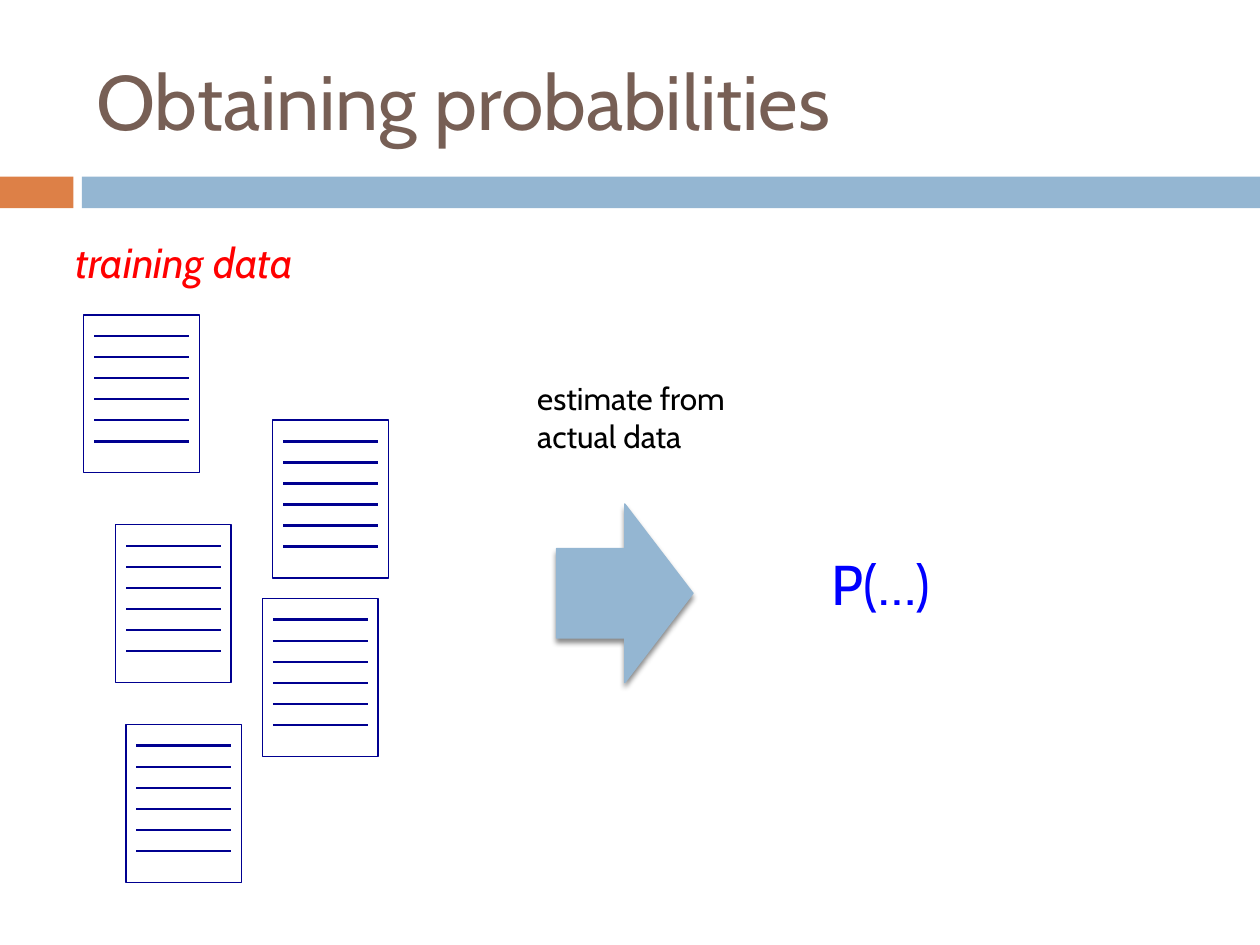
from dataclasses import dataclass

import pptx
import pptx.dml.color
import pptx.enum.shapes
import pptx.enum.text
import pptx.oxml
import pptx.oxml.ns
import pptx.util
from pptx.dml.color import RGBColor
from pptx.util import Cm, Pt

ORANGE = RGBColor(0xDD, 0x80, 0x47)
LIGHT_BLUE = RGBColor(0x94, 0xB6, 0xD2)
BROWN = RGBColor(0x77, 0x5F, 0x55)
NAVY = RGBColor(0x00, 0x00, 0x90)
BLUE = RGBColor(0x00, 0x00, 0xFF)
RED = RGBColor(0xFF, 0x00, 0x00)
BLACK = RGBColor(0x00, 0x00, 0x00)

FONT = "Cabin"
RECTANGLE = pptx.enum.shapes.MSO_SHAPE.RECTANGLE
THIN = Pt(0.79)

PAGE_WIDTH, PAGE_HEIGHT = 2.33, 3.18
PAGE_MARGIN = 0.21
LINES_PER_PAGE = 6
LINE_GAP = PAGE_HEIGHT / 7.5

ARROW_SHADOW = (
    f'<a:effectLst {pptx.oxml.ns.nsdecls("a")}>'
    '<a:outerShdw blurRad="38100" dist="30480" dir="5400000" rotWithShape="0">'
    '<a:srgbClr val="000000"><a:alpha val="45000"/></a:srgbClr>'
    "</a:outerShdw></a:effectLst>"
)


@dataclass(frozen=True)
class Box:
    """Position and size in centimetres."""

    left: float
    top: float
    width: float
    height: float

    def lengths(self) -> tuple:
        return Cm(self.left), Cm(self.top), Cm(self.width), Cm(self.height)


@dataclass(frozen=True)
class Label:
    text: str
    box: Box
    size: int
    color: RGBColor
    italic: bool = False
    middle: bool = False


@dataclass(frozen=True)
class Page:
    """Top left corner of a training document, in centimetres."""

    left: float
    top: float


BANDS = [
    (Box(0, 3.56, 1.48, 0.64), ORANGE),
    (Box(1.65, 3.56, 23.75, 0.64), LIGHT_BLUE),
]
TITLE = Label("Obtaining probabilities", Box(1.69, 0.64, 22.66, 2.75), 44, BROWN, middle=True)
PAGES = [
    Page(1.69, 6.35),
    Page(5.5, 8.47),
    Page(2.33, 10.58),
    Page(5.29, 12.07),
    Page(2.54, 14.61),
]
ARROW_BOX = Box(11.22, 10.16, 2.75, 3.6)
LABELS = [
    Label("P(…)", Box(16.51, 10.95, 4.01, 1.63), 32, BLUE),
    Label("estimate from actual data", Box(10.58, 7.52, 4.88, 1.8), 18, BLACK),
    Label("training data", Box(1.27, 4.65, 8.89, 1.27), 24, RED, italic=True),
]


def add_band(slide, box: Box, color: RGBColor) -> None:
    band = slide.shapes.add_shape(RECTANGLE, *box.lengths())
    band.shadow.inherit = False
    band.fill.solid()
    band.fill.fore_color.rgb = color
    band.line.fill.background()


def add_label(slide, label: Label) -> None:
    textbox = slide.shapes.add_textbox(*label.box.lengths())
    frame = textbox.text_frame
    frame.word_wrap = True
    if label.middle:
        frame.vertical_anchor = pptx.enum.text.MSO_ANCHOR.MIDDLE
    else:
        frame.auto_size = pptx.enum.text.MSO_AUTO_SIZE.SHAPE_TO_FIT_TEXT
    run = frame.paragraphs[0].add_run()
    run.text = label.text
    run.font.name = FONT
    run.font.size = Pt(label.size)
    run.font.color.rgb = label.color
    run.font.italic = label.italic


def add_page(slide, page: Page) -> None:
    """Draw a document as a grouped outline with evenly spaced lines of writing."""
    group = slide.shapes.add_group_shape()
    outline_box = Box(page.left, page.top, PAGE_WIDTH, PAGE_HEIGHT)
    outline = group.shapes.add_shape(RECTANGLE, *outline_box.lengths())
    outline.shadow.inherit = False
    outline.fill.background()
    outline.line.color.rgb = NAVY
    outline.line.width = THIN

    start = Cm(page.left + PAGE_MARGIN)
    end = Cm(page.left + PAGE_WIDTH - PAGE_MARGIN)
    for number in range(1, LINES_PER_PAGE + 1):
        height = Cm(page.top + number * LINE_GAP)
        writing = group.shapes.add_connector(
            pptx.enum.shapes.MSO_CONNECTOR.STRAIGHT, start, height, end, height
        )
        writing.line.color.rgb = NAVY
        writing.line.width = Pt(1.5)
        properties = writing._element.spPr
        properties.append(pptx.oxml.ns.qn and pptx.oxml.parse_xml(
            f'<a:effectLst {pptx.oxml.ns.nsdecls("a")}/>'
        ))


def add_arrow(slide, box: Box) -> None:
    arrow = slide.shapes.add_shape(
        pptx.enum.shapes.MSO_SHAPE.RIGHT_ARROW, *box.lengths()
    )
    arrow.fill.solid()
    arrow.fill.fore_color.rgb = LIGHT_BLUE
    arrow.line.color.rgb = LIGHT_BLUE
    arrow.line.width = THIN
    arrow._element.spPr.append(pptx.oxml.parse_xml(ARROW_SHADOW))


def main() -> None:
    presentation = pptx.Presentation()
    presentation.slide_width = Cm(25.4)
    presentation.slide_height = Cm(19.05)
    slide = presentation.slides.add_slide(presentation.slide_layouts[6])

    for box, color in BANDS:
        add_band(slide, box, color)
    add_label(slide, TITLE)
    for page in PAGES:
        add_page(slide, page)
    add_arrow(slide, ARROW_BOX)
    for label in LABELS:
        add_label(slide, label)

    presentation.save("out.pptx")


if __name__ == "__main__":
    main()
